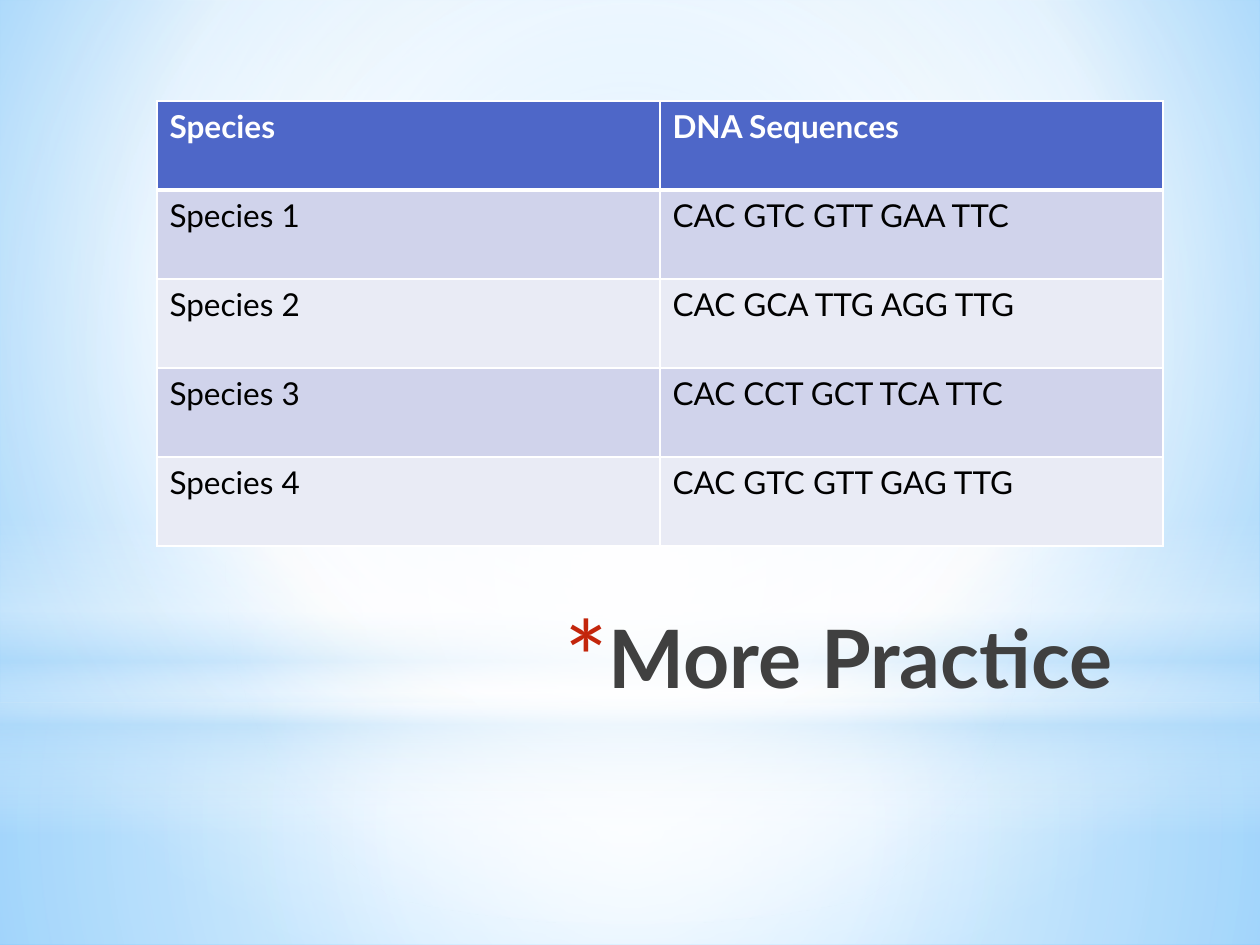
"""Build a slide with a table of species DNA sequences above a practice title."""
from typing import NamedTuple

from lxml import etree
from pptx import Presentation
from pptx.dml.color import RGBColor
from pptx.enum.shapes import MSO_SHAPE
from pptx.enum.text import MSO_ANCHOR, PP_ALIGN
from pptx.oxml.ns import qn
from pptx.util import Emu, Pt

RECTANGLE = MSO_SHAPE.RECTANGLE
OVAL = MSO_SHAPE.OVAL
RIGHT = PP_ALIGN.RIGHT
TOP = MSO_ANCHOR.TOP

FONT = "Lato"
WHITE = RGBColor(0xFF, 0xFF, 0xFF)
BLACK = RGBColor(0, 0, 0)
SKY = RGBColor(0x9E, 0xD5, 0xFF)
DEEP_SKY = RGBColor(0x5B, 0xB9, 0xFF)
PALE_BLUE = RGBColor(0xB4, 0xDC, 0xFA)
HEADER_BLUE = RGBColor(0x4E, 0x67, 0xC8)
BAND_DARK = RGBColor(0xD0, 0xD3, 0xEB)
BAND_LIGHT = RGBColor(0xE9, 0xEB, 0xF5)
TITLE_GREY = RGBColor(0x40, 0x40, 0x40)
BULLET_RED = RGBColor(0xC3, 0x26, 0x0C)

COLUMN_WIDTH, ROW_HEIGHT = 503, 89
SEQUENCES = [
    ("Species", "DNA Sequences"),
    ("Species 1", "CAC GTC GTT GAA TTC"),
    ("Species 2", "CAC GCA TTG AGG TTG"),
    ("Species 3", "CAC CCT GCT TCA TTC"),
    ("Species 4", "CAC GTC GTT GAG TTG"),
]


class Stop(NamedTuple):
    position: int
    color: RGBColor
    alpha: int = 100


class Glow(NamedTuple):
    outline: MSO_SHAPE
    left: int
    top: int
    width: int
    height: int
    stops: list[Stop]
    focus: tuple[int, int, int, int] | None = (50, 50, 50, 50)


BACKGROUND = [Stop(0, SKY), Stop(60, WHITE), Stop(100, DEEP_SKY)]
GLOWS = [
    Glow(RECTANGLE, 0, 703, 1260, 242,
         [Stop(0, WHITE, 91), Stop(37, WHITE, 76), Stop(100, PALE_BLUE, 79)]),
    Glow(RECTANGLE, 0, 0, 1260, 703,
         [Stop(0, WHITE, 89), Stop(48, WHITE, 62), Stop(100, PALE_BLUE, 79)]),
    Glow(RECTANGLE, 0, 519, 1260, 315,
         [Stop(0, WHITE, 0), Stop(29, WHITE, 30), Stop(45, PALE_BLUE, 40),
          Stop(55, WHITE, 26), Stop(65, PALE_BLUE, 60), Stop(100, WHITE, 0)], None),
    Glow(OVAL, 0, 221, 1260, 703, [Stop(0, WHITE), Stop(56, WHITE, 0)]),
]


def px(length: int) -> Emu:
    """Turn pixels into EMU."""
    return Emu(round(length * 914400 / 126))


def add_node(parent, tag: str, **attributes):
    """Append a drawing element with the given attributes."""
    return etree.SubElement(parent, qn(tag),
                            {key: str(value) for key, value in attributes.items()})


def set_gradient(fill, holder, stops: list[Stop], focus) -> None:
    """Fill with a circular gradient, or a vertical one when there is no focus."""
    fill.solid()
    solid = holder.find(qn("a:solidFill"))
    gradient = etree.Element(qn("a:gradFill"), rotWithShape="1")
    stop_list = add_node(gradient, "a:gsLst")
    for stop in stops:
        mark = add_node(stop_list, "a:gs", pos=stop.position * 1000)
        color = add_node(mark, "a:srgbClr", val=stop.color)
        if stop.alpha < 100:
            add_node(color, "a:alpha", val=stop.alpha * 1000)
    if focus:
        circle = add_node(gradient, "a:path", path="circle")
        sides = {side: share * 1000 for side, share in zip("ltrb", focus)}
        add_node(circle, "a:fillToRect", **sides)
    else:
        add_node(gradient, "a:lin", ang=90 * 60000, scaled=0)
    holder.replace(solid, gradient)


def add_glow(slide, glow: Glow) -> None:
    """Draw one translucent layer of the backdrop."""
    layer = slide.shapes.add_shape(glow.outline, px(glow.left), px(glow.top),
                                   px(glow.width), px(glow.height))
    layer.shadow.inherit = False
    layer.line.fill.background()
    set_gradient(layer.fill, layer.fill._xPr, glow.stops, glow.focus)


def add_text(paragraph, text: str, size: int, color: RGBColor, bold: bool) -> None:
    """Add one formatted run."""
    run = paragraph.add_run()
    run.text = text
    run.font.name = FONT
    run.font.size = Pt(size)
    run.font.bold = bold
    run.font.color.rgb = color


def add_title(slide) -> None:
    """Write the right-aligned title with its red asterisk bullet."""
    title = slide.shapes.add_textbox(px(247), px(602), px(897), px(158))
    title.text_frame.word_wrap = True
    title.text_frame.vertical_anchor = TOP
    paragraph = title.text_frame.paragraphs[0]
    paragraph.alignment = RIGHT
    add_text(paragraph, "More Practice ", 46, TITLE_GREY, True)
    properties = paragraph._p.get_or_add_pPr()
    properties.set("marL", str(px(44)))
    properties.set("indent", str(-px(44)))
    bullet_color = add_node(properties, "a:buClr")
    add_node(bullet_color, "a:srgbClr", val=BULLET_RED)
    add_node(properties, "a:buSzPct", val=128000)
    add_node(properties, "a:buFont", typeface=FONT)
    add_node(properties, "a:buChar", char="*")


def set_borders(cell, header: bool, below_header: bool) -> None:
    """Outline a cell in white, with a thick rule under the header."""
    properties = cell._tc.get_or_add_tcPr()
    thick_side = {"a:lnB": header, "a:lnT": below_header}
    for index, side in enumerate(("a:lnL", "a:lnR", "a:lnT", "a:lnB")):
        width = Pt(3 if thick_side.get(side) else 1)
        border = etree.Element(qn(side), w=str(width))
        add_node(add_node(border, "a:solidFill"), "a:srgbClr", val=WHITE)
        properties.insert(index, border)


def add_sequence_table(slide) -> None:
    """Draw the banded table of species and sequences."""
    columns = len(SEQUENCES[0])
    table = slide.shapes.add_table(
        len(SEQUENCES), columns, px(157), px(101),
        px(COLUMN_WIDTH * columns), px(ROW_HEIGHT * len(SEQUENCES))).table
    for row, texts in enumerate(SEQUENCES):
        header = row == 0
        band = BAND_DARK if row % 2 else BAND_LIGHT
        for column, text in enumerate(texts):
            cell = table.cell(row, column)
            cell.fill.solid()
            cell.fill.fore_color.rgb = HEADER_BLUE if header else band
            set_borders(cell, header, row == 1)
            add_text(cell.text_frame.paragraphs[0], text, 18,
                     WHITE if header else BLACK, header)


def main() -> None:
    """Assemble and save the slide."""
    presentation = Presentation()
    presentation.slide_width, presentation.slide_height = px(1260), px(945)
    slide = presentation.slides.add_slide(presentation.slide_layouts[6])
    backdrop = slide.background.fill
    set_gradient(backdrop, backdrop._xPr, BACKGROUND, (20, 10, 20, 60))
    for glow in GLOWS:
        add_glow(slide, glow)
    add_title(slide)
    add_sequence_table(slide)
    presentation.save("out.pptx")


if __name__ == "__main__":
    main()
